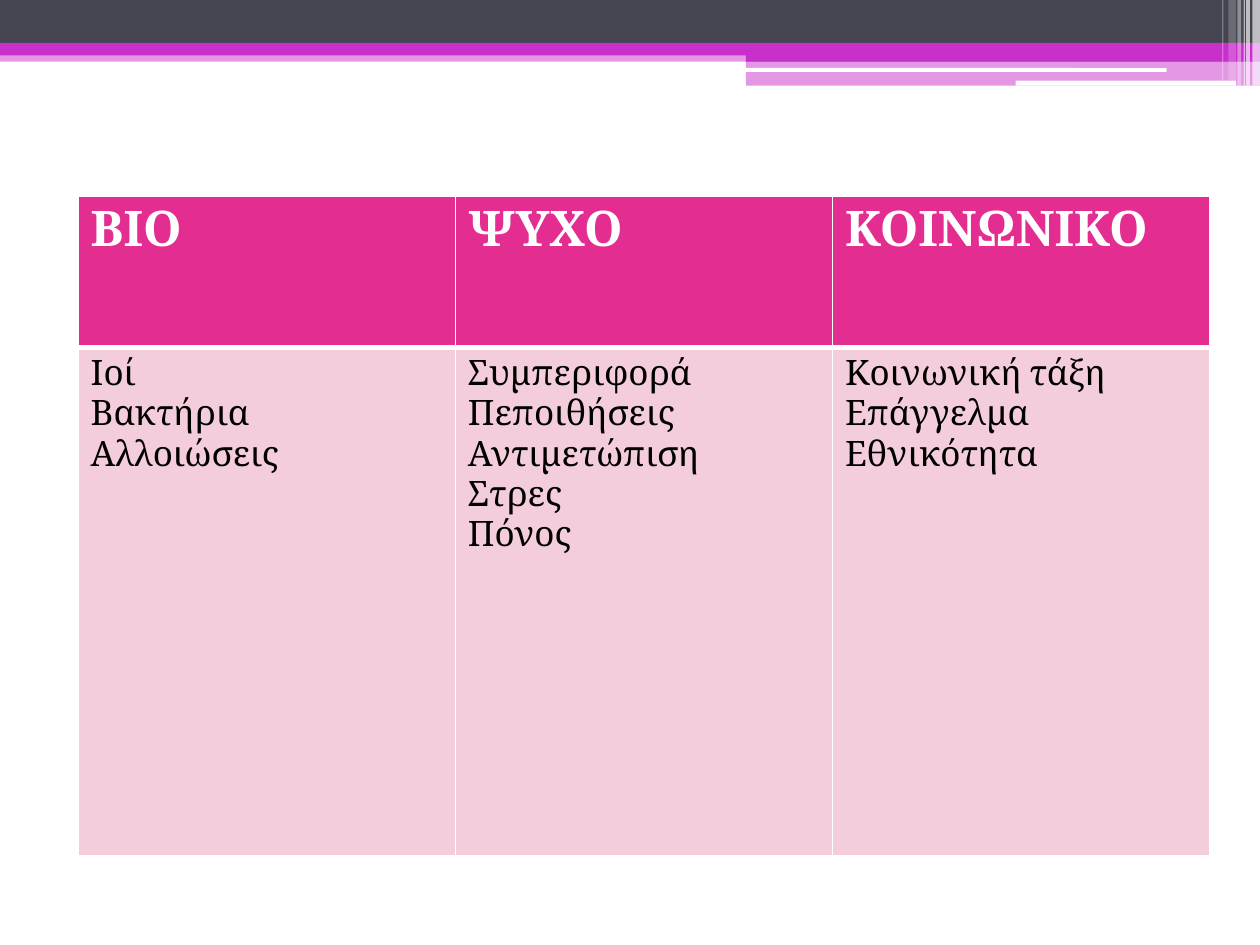
from lxml import etree
from pptx import Presentation
from pptx.dml.color import RGBColor
from pptx.enum.shapes import MSO_SHAPE
from pptx.oxml.ns import qn
from pptx.util import Inches, Pt

RECTANGLE = MSO_SHAPE.RECTANGLE
ROUNDED = MSO_SHAPE.ROUNDED_RECTANGLE
BLANK_LAYOUT = 6

MAGENTA, SLATE, WHITE, BLACK = "C830CC", "454551", "FFFFFF", "000000"
PINK, PALE_PINK = "E32D91", "F4CDDC"

BANDS = [
    (0, 4, 100, 0.9, MAGENTA, 50),
    (0, 0, 100, 3.4, SLATE, 100),
    (0, 3.4, 100, 1, MAGENTA, 100),
    (59.2, 3.9, 40.8, 1, MAGENTA, 100),
    (59.2, 4.8, 40.8, 2, MAGENTA, 50),
]
HIGHLIGHTS = [(59.1, 5.4, 33.5, 0.3), (80.6, 6.4, 17.5, 0.4)]
STRIPES = [
    (99.4, 0.6, 6.8, 65),
    (98.9, 0.3, 6.8, 65),
    (98.7, 0.1, 6.8, 60),
    (98.2, 0.3, 6.8, 40),
    (97.5, 0.6, 6.4, 20),
    (97, 0.1, 6.4, 30),
]
FACTORS = {
    "ΒΙΟ": ["Ιοί", "Βακτήρια", "Αλλοιώσεις"],
    "ΨΥΧΟ": ["Συμπεριφορά", "Πεποιθήσεις", "Αντιμετώπιση", "Στρες", "Πόνος"],
    "ΚΟΙΝΩΝΙΚΟ": ["Κοινωνική τάξη", "Επάγγελμα", "Εθνικότητα"],
}


def color(value):
    """Turn a hex string into a colour."""
    return RGBColor.from_string(value)


def grid(units):
    """Turn grid units, a hundredth of the slide width each, into a length."""
    return Inches(units / 10)


class SlideBuilder:
    """Hold the text style and the current slide."""

    font = "Cambria"

    def __init__(self, presentation):
        """Add a blank slide to the presentation."""
        layout = presentation.slide_layouts[BLANK_LAYOUT]
        self.slide = presentation.slides.add_slide(layout)

    def bar(self, left, top, width, height, fill, opacity=100, kind=RECTANGLE):
        """Draw a borderless bar."""
        shape = self.slide.shapes.add_shape(kind, *map(grid, (left, top, width, height)))
        shape.shadow.inherit = False
        shape.line.fill.background()
        shape.fill.solid()
        shape.fill.fore_color.rgb = color(fill)
        if opacity < 100:
            value = shape.fill._xPr.find(".//" + qn("a:srgbClr"))
            etree.SubElement(value, qn("a:alpha"), val=str(opacity * 1000))

    def table(self, left, top, width, row_heights, columns):
        """Draw a table from a mapping of headings to entries."""
        sizes = map(grid, (left, top, width, sum(row_heights)))
        table = self.slide.shapes.add_table(len(row_heights), len(columns), *sizes).table
        for row, height in zip(table.rows, row_heights):
            row.height = grid(height)
        for index, (heading, entries) in enumerate(columns.items()):
            table.columns[index].width = grid(width / len(columns))
            self.cell(table.cell(0, index), [heading], 28, WHITE, PINK, True, bottom=3)
            self.cell(table.cell(1, index), entries, 20, BLACK, PALE_PINK, False, top=3)

    def cell(self, cell, lines, size, ink, fill, bold, top=1, bottom=1):
        """Fill one table cell with text, one line a paragraph."""
        self.borders(cell, {"a:lnL": 1, "a:lnR": 1, "a:lnT": top, "a:lnB": bottom})
        cell.fill.solid()
        cell.fill.fore_color.rgb = color(fill)
        for index, line in enumerate(lines):
            frame = cell.text_frame
            paragraph = frame.add_paragraph() if index else frame.paragraphs[0]
            run = paragraph.add_run()
            run.text = line
            run.font.name = self.font
            run.font.size = Pt(size)
            run.font.bold = bold
            run.font.color.rgb = color(ink)

    def borders(self, cell, widths):
        """Give a cell white borders of the given point widths."""
        properties = cell._tc.get_or_add_tcPr()
        for tag, width in widths.items():
            line = etree.SubElement(properties, qn(tag), w=str(Pt(width)))
            fill = etree.SubElement(line, qn("a:solidFill"))
            etree.SubElement(fill, qn("a:srgbClr"), val=WHITE)


def main():
    """Build and save the slide."""
    presentation = Presentation()
    presentation.slide_width = grid(100)
    presentation.slide_height = grid(75)
    builder = SlideBuilder(presentation)
    for band in BANDS:
        builder.bar(*band)
    for highlight in HIGHLIGHTS:
        builder.bar(*highlight, WHITE, kind=ROUNDED)
    for left, width, height, opacity in STRIPES:
        builder.bar(left, 0, width, height, WHITE, opacity)
    builder.table(6.2, 15.6, 89.8, [12, 40.3], FACTORS)
    presentation.save("out.pptx")


if __name__ == "__main__":
    main()
